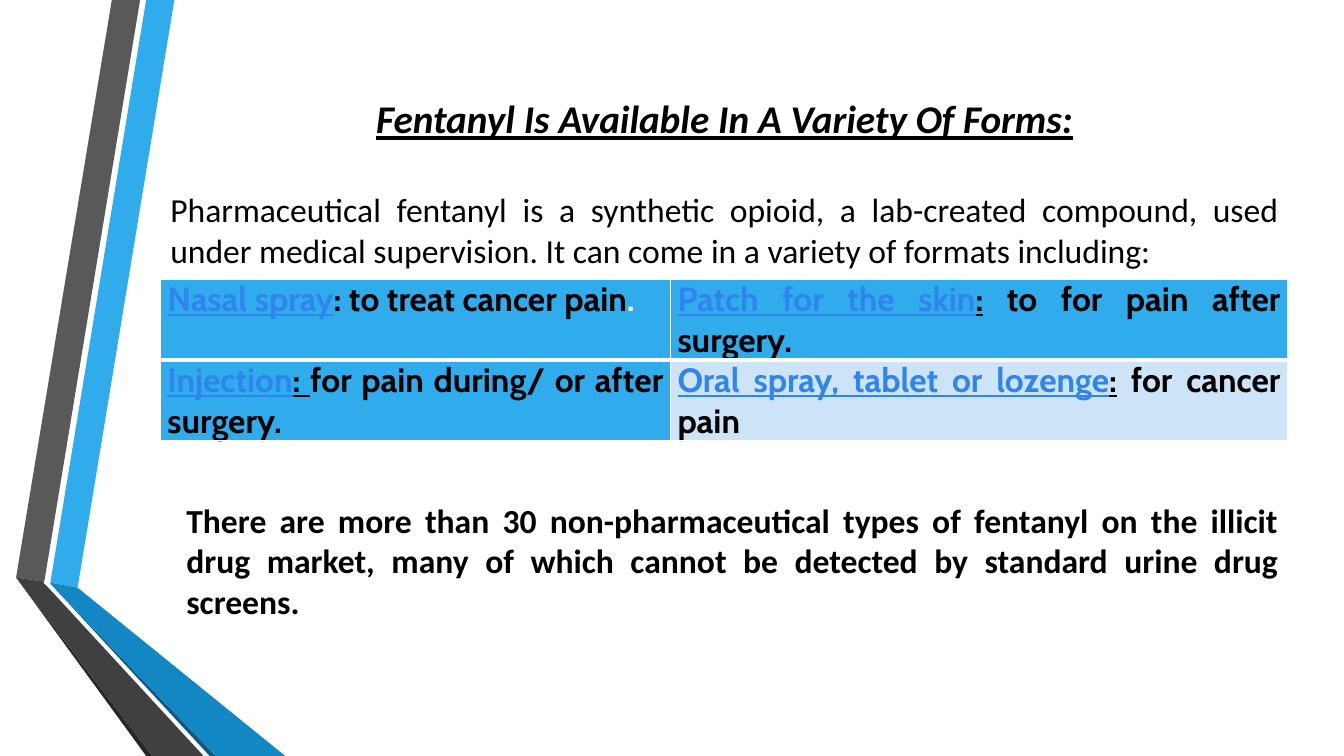
from lxml import etree
from pptx import Presentation
from pptx.dml.color import RGBColor
from pptx.enum.text import PP_ALIGN
from pptx.oxml.ns import qn
from pptx.util import Inches, Pt

MID, JUST = PP_ALIGN.CENTER, PP_ALIGN.JUSTIFY
BLACK, WHITE, SKY, PALE, LINK = "000000", "FFFFFF", "30ACEC", "CDE3F8", "3085ED"

BANDS = [
    (SKY, [(0.5, 5.78), (0.77, 5.83), (1.73, 0), (1.45, 0)]),
    ("595959", [(1.39, 0), (1.11, 0), (0.16, 5.73), (0.44, 5.77)]),
    ("262626", [(0.16, 5.73), (1.45, 7.5), (1.51, 7.5)]),
    ("0C5A82", [(0.5, 5.79), (2.08, 7.5), (2.14, 7.5)]),
    ("1287C3", [(0.5, 5.79), (2.14, 7.5), (2.83, 7.5), (0.77, 5.83), (0.5, 5.78)]),
    ("404040", [(2.02, 7.5), (0.48, 5.83), (0.43, 5.78), (0.44, 5.77),
                (0.16, 5.73), (1.51, 7.5)]),
]

# Each run: text, colour, underlined
FORMS = [
    [(SKY, [("Nasal spray", LINK, True), (": to treat cancer pain", BLACK, False),
            (".", WHITE, False)]),
     (SKY, [("Patch for the skin", LINK, True), (":", BLACK, True),
            (" to for pain after surgery.", BLACK, False)])],
    [(SKY, [("Injection", LINK, True), (": ", BLACK, True),
            ("for pain during/ or after surgery.", BLACK, False)]),
     (PALE, [("Oral spray, tablet or lozenge", LINK, True), (":", BLACK, True),
             (" for cancer pain", BLACK, False)])],
]


def color(hue):
    return RGBColor.from_string(hue)


class Deck:
    font = "Calibri"
    cell_font = "Cabin"
    size = 24

    def __init__(self, slide):
        self.slide = slide

    def band(self, hue, points):
        """Draw a filled outline through points given in inches."""
        spots = [(Inches(x), Inches(y)) for x, y in points]
        pen = self.slide.shapes.build_freeform(*spots[0])
        pen.add_line_segments(spots[1:], close=True)
        shape = pen.convert_to_shape()
        shape.shadow.inherit = False
        shape.fill.solid()
        shape.fill.fore_color.rgb = color(hue)
        shape.line.fill.background()

    def run(self, para, text, hue=BLACK, line=False, bold=True,
            slant=False, size=size, font=font):
        run = para.add_run()
        run.text = text
        style = run.font
        style.name, style.size = font, Pt(size)
        style.bold, style.italic, style.underline = bold, slant, line
        style.color.rgb = color(hue)

    def box(self, left, top, width, height):
        """Add a wrapping text box and return its frame."""
        area = [Inches(n) for n in (left, top, width, height)]
        frame = self.slide.shapes.add_textbox(*area).text_frame
        frame.word_wrap = True
        return frame

    def edge(self, cell, side, width):
        """Give one side of a cell a white border."""
        props = cell._tc.get_or_add_tcPr()
        line = etree.SubElement(props, qn("a:ln" + side), w=str(Pt(width)))
        fill = etree.SubElement(line, qn("a:solidFill"))
        etree.SubElement(fill, qn("a:srgbClr"), val=WHITE)

    def table(self, left, top, widths, high, rows):
        area = [Inches(n) for n in (left, top, sum(widths), high * len(rows))]
        grid = self.slide.shapes.add_table(len(rows), len(widths), *area).table
        for col, width in zip(grid.columns, widths):
            col.width = Inches(width)
        for r, row in enumerate(rows):
            grid.rows[r].height = Inches(high)
            for c, (hue, runs) in enumerate(row):
                cell = grid.cell(r, c)
                cell.margin_left = cell.margin_right = Inches(0.07)
                cell.margin_top = cell.margin_bottom = 0
                thick = {"T": 3 if r else 1, "B": 1 if r else 3}
                for side in "LRTB":
                    self.edge(cell, side, thick.get(side, 1))
                cell.fill.solid()
                cell.fill.fore_color.rgb = color(hue)
                para = cell.text_frame.paragraphs[0]
                para.alignment = JUST
                for text, ink, line in runs:
                    self.run(para, text, ink, line, font=self.cell_font)


def main():
    prs = Presentation()
    prs.slide_width, prs.slide_height = Inches(13.33), Inches(7.5)
    deck = Deck(prs.slides.add_slide(prs.slide_layouts[6]))
    for hue, points in BANDS:
        deck.band(hue, points)

    frame = deck.box(1.59, 0.89, 11.19, 1.85)
    title = frame.paragraphs[0]
    title.alignment = MID
    deck.run(title, "Fentanyl Is Available In A Variety Of Forms:",
             line=True, slant=True, size=28)
    intro = frame.add_paragraph()
    intro.alignment = JUST
    intro.space_before = Pt(34)
    deck.run(intro, "Pharmaceutical fentanyl is a synthetic opioid, a lab-created "
             "compound, used under medical supervision. It can come in a variety "
             "of formats including:", bold=False)

    deck.table(1.59, 2.77, [5.06, 6.12], 0.8, FORMS)

    note = deck.box(1.75, 4.91, 11.03, 1.31).paragraphs[0]
    note.alignment = JUST
    deck.run(note, "There are more than 30 non-pharmaceutical types of fentanyl on "
             "the illicit drug market, many of which cannot be detected by standard "
             "urine drug screens.")
    prs.save("out.pptx")


if __name__ == "__main__":
    main()
